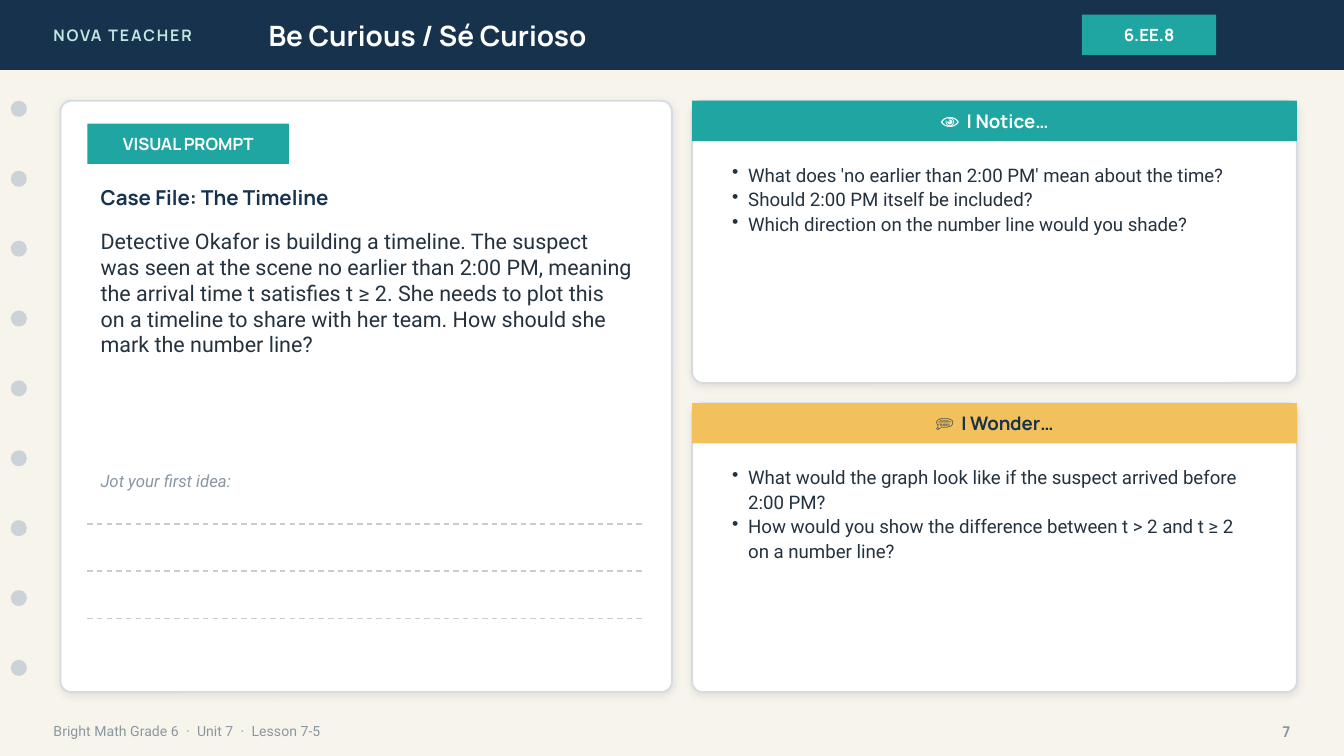
from lxml.etree import SubElement
from pptx import Presentation
from pptx.dml.color import RGBColor
from pptx.enum.dml import MSO_LINE
from pptx.enum.shapes import MSO_CONNECTOR, MSO_SHAPE
from pptx.enum.text import MSO_ANCHOR, PP_ALIGN
from pptx.oxml.ns import qn
from pptx.util import Pt

NAVY, TEAL, GOLD, WHITE = "17324D", "1FA6A2", "F2C15B", "FFFFFF"
INK, GREY = "24323F", "8A96A3"

HEADING = {"name": "Manrope", "bold": True}
BODY = {"name": "Roboto"}
LABEL = {**HEADING, "size": 9, "color": WHITE}
PROMPT = {**BODY, "size": 11.5, "color": INK}
IDEAS = {**BODY, "size": 10, "color": INK}
BULLET_INDENT = 8.6


def rgb(color):
    return RGBColor.from_string(color)


def set_font(font, style):
    for key, value in style.items():
        if key == "color":
            font.color.rgb = rgb(value)
        else:
            setattr(font, key, Pt(value) if key == "size" else value)


def add_span(para, text, style, spacing=0):
    span = para.add_run()
    span.text = text
    set_font(span.font, style)
    if spacing:
        span._r.get_or_add_rPr().set("spc", str(round(spacing * 100)))


def write_line(shape, parts, style, align=PP_ALIGN.LEFT, spacing=0, gap=2):
    """Write one middle-anchored line, its parts parted by widened spaces."""
    frame = shape.text_frame
    frame.word_wrap = True
    frame.vertical_anchor = MSO_ANCHOR.MIDDLE
    para = frame.paragraphs[0]
    para.alignment = align
    for index, part in enumerate(parts):
        if index:
            add_span(para, " ", style, gap)
        add_span(para, part, style, spacing)


def add_text_box(page, left, top, width, height):
    box = page.shapes.add_textbox(Pt(left), Pt(top), Pt(width), Pt(height))
    box.text_frame.word_wrap = True
    return box


def add_block(page, left, top, width, height, fill, kind=MSO_SHAPE.RECTANGLE):
    block = page.shapes.add_shape(kind, Pt(left), Pt(top), Pt(width), Pt(height))
    block.shadow.inherit = False
    block.fill.solid()
    block.fill.fore_color.rgb = rgb(fill)
    block.line.fill.background()
    return block


def add_card(page, left, top, width, height):
    """White rounded card with a thin border and a soft shadow below."""
    card = add_block(page, left, top, width, height, WHITE, MSO_SHAPE.ROUNDED_RECTANGLE)
    card.adjustments[0] = 5.76 / min(width, height)
    card.line.color.rgb = rgb("D6DBDF")
    card.line.width = Pt(1)
    effects = card._element.spPr.find(qn("a:effectLst"))
    shadow = SubElement(effects, qn("a:outerShdw"), blurRad=str(Pt(4)),
                        dist=str(Pt(1)), dir="5400000", rotWithShape="0")
    tint = SubElement(shadow, qn("a:srgbClr"), val="1C2E42")
    SubElement(tint, qn("a:alpha"), val="10000")


def add_header(page, left, top, width, height):
    add_block(page, left, top, width, height, NAVY)
    brand = add_text_box(page, left + 21.6, top, 172.8, height)
    write_line(brand, ["NOVA TEACHER"], {**HEADING, "size": 8.5, "color": "BFE6E2"}, spacing=1)
    title = add_text_box(page, left + 136.8, top, 403.2, height)
    write_line(title, ["Be Curious / Sé Curioso"], {**HEADING, "size": 15, "color": WHITE})
    standard = add_block(page, left + 579.6, top + 7.92, 72, 21.6, TEAL)
    write_line(standard, ["6.EE.8"], LABEL, PP_ALIGN.CENTER)


def add_binder_holes(page, left, top, count=9, size=8.64, pitch=37.44):
    for index in range(count):
        add_block(page, left, top + index * pitch, size, size, "CBD3D9", MSO_SHAPE.OVAL)


def add_footer(page, left, top, width, height):
    source = add_text_box(page, left, top, 504, height)
    write_line(source, ["Bright Math Grade 6", "·", "Unit 7", "·", "Lesson 7-5"],
               {**BODY, "size": 7.5, "color": GREY})
    number = add_text_box(page, left + width - 36, top, 36, height)
    write_line(number, ["7"], {**HEADING, "size": 8, "color": GREY}, PP_ALIGN.RIGHT)


def add_writing_line(page, left, top, width):
    rule = page.shapes.add_connector(MSO_CONNECTOR.STRAIGHT, Pt(left), Pt(top),
                                     Pt(left + width), Pt(top))
    rule.line.color.rgb = rgb("C7CDD2")
    rule.line.width = Pt(0.75)
    rule.line.dash_style = MSO_LINE.DASH
    SubElement(rule._element.spPr, qn("a:effectLst"))


def add_prompt_card(page, left, top, width, height):
    add_card(page, left, top, width, height)
    inner, inner_width = left + 14.4, width - 28.8
    tag = add_block(page, inner, top + 12.24, 108, 21.6, TEAL)
    write_line(tag, ["VISUAL PROMPT"], LABEL, PP_ALIGN.CENTER)
    heading = add_text_box(page, inner, top + 41.04, inner_width, 21.6)
    write_line(heading, ["Case File: The Timeline"], {**HEADING, "size": 11, "color": NAVY})
    story = add_text_box(page, inner, top + 64.8, inner_width, 122.4)
    add_span(story.text_frame.paragraphs[0],
             "Detective Okafor is building a timeline. The suspect was seen at the scene "
             "no earlier than 2:00 PM, meaning the arrival time t satisfies t ≥ 2. She needs "
             "to plot this on a timeline to share with her team. How should she mark the "
             "number line?", PROMPT)
    jot = add_text_box(page, inner, top + 194.4, 288, 18)
    write_line(jot, ["Jot your first idea:"], {**BODY, "size": 9, "color": GREY, "italic": True})
    for index in range(3):
        add_writing_line(page, inner, top + 226.8 + index * 25.2, inner_width)


def add_bullet(para):
    props = para._p.get_or_add_pPr()
    props.set("marL", str(Pt(BULLET_INDENT)))
    props.set("indent", str(-Pt(BULLET_INDENT)))
    SubElement(props, qn("a:buChar"), char="•")


def add_idea_card(page, left, top, width, height, title, fill, color, ideas):
    add_card(page, left, top, width, height)
    banner = add_block(page, left, top, width, 21.6, fill)
    write_line(banner, title, {**HEADING, "size": 10, "color": color}, PP_ALIGN.CENTER)
    frame = add_text_box(page, left + 14.4, top + 28.8, width - 28.8, height - 36).text_frame
    for index, idea in enumerate(ideas):
        para = frame.add_paragraph() if index else frame.paragraphs[0]
        para.line_spacing = 1.1
        add_bullet(para)
        add_span(para, idea, IDEAS)


def main():
    deck = Presentation()
    deck.slide_width, deck.slide_height = Pt(720), Pt(405)
    page = deck.slides.add_slide(deck.slide_layouts[6])
    page.background.fill.solid()
    page.background.fill.fore_color.rgb = rgb("F7F4EC")

    add_header(page, 0, 0, 720, 37.44)
    add_binder_holes(page, 5.76, 54)
    add_footer(page, 21.6, 381.6, 676.8, 20.16)
    add_prompt_card(page, 32.4, 54, 327.6, 316.8)
    add_idea_card(page, 370.8, 54, 324, 151.2, ["👁", "I Notice…"], TEAL, WHITE, [
        "What does 'no earlier than 2:00 PM' mean about the time?",
        "Should 2:00 PM itself be included?",
        "Which direction on the number line would you shade?",
    ])
    add_idea_card(page, 370.8, 216, 324, 154.8, ["💭", "I Wonder…"], GOLD, NAVY, [
        "What would the graph look like if the suspect arrived before 2:00 PM?",
        "How would you show the difference between t > 2 and t ≥ 2 on a number line?",
    ])
    deck.save("out.pptx")


if __name__ == "__main__":
    main()
